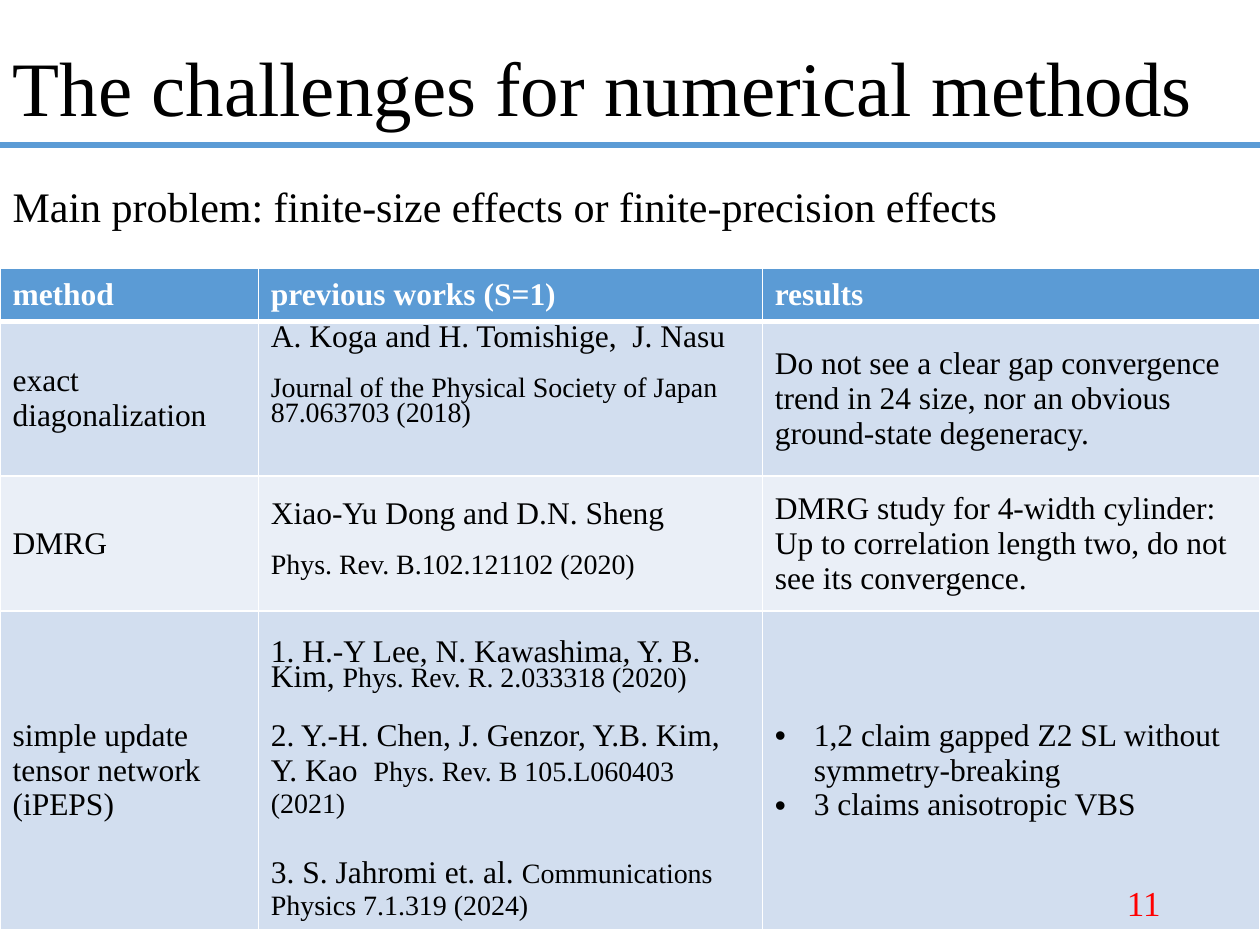
"""Build the slide on the challenges for numerical methods."""
from dataclasses import dataclass

from lxml.etree import SubElement
from pptx import Presentation
from pptx.dml.color import RGBColor
from pptx.enum.shapes import MSO_CONNECTOR
from pptx.enum.text import MSO_ANCHOR, MSO_AUTO_SIZE, PP_ALIGN
from pptx.oxml import parse_xml
from pptx.oxml.ns import nsdecls, qn
from pptx.util import Inches, Pt


@dataclass(frozen=True)
class Theme:
    font: str = "Times New Roman"
    blue: str = "5B9BD5"
    band_dark: str = "D2DEEF"
    band_light: str = "EAEFF7"
    white: str = "FFFFFF"
    black: str = "000000"
    red: str = "FF0000"
    title: int = 44
    lead: int = 24
    page: int = 20
    cell: int = 18
    cite: int = 16
    tight: float = 14.2
    gap: float = 20.7


T = Theme()


@dataclass(frozen=True)
class Para:
    text: str
    cite: str = ""
    size: int = T.cell
    line: float = 0
    before: float = 0
    bullet: bool = False


@dataclass(frozen=True)
class Cell:
    paras: tuple[Para, ...]
    top: float = 0.05
    bottom: float = 0.05


def plain(*lines: str) -> Cell:
    """Make a cell of ordinary paragraphs."""
    return Cell(tuple(Para(line) for line in lines))


def work(authors: str, journal: str, bottom: float = 0.05) -> Cell:
    """Make a cell with authors above a journal reference."""
    return Cell((Para(authors, line=T.tight),
                 Para(journal, size=T.cite, line=T.tight, before=T.tight)), bottom=bottom)


COLS = (2.05, 4, 3.95)
ROWS = (0.42, 1.23, 1.07, 2.53)
FILLS = (T.blue, T.band_dark, T.band_light, T.band_dark)
CELLS = (
    (plain("method"), plain("previous works (S=1)"), plain("results")),
    (plain("exact", "diagonalization"),
     work("A. Koga and H. Tomishige,  J. Nasu",
          "Journal of the Physical Society of Japan 87.063703 (2018)", bottom=0.36),
     plain("Do not see a clear gap convergence trend in 24 size, "
           "nor an obvious ground-state degeneracy.")),
    (plain("DMRG"),
     work("Xiao-Yu Dong and D.N. Sheng", "Phys. Rev. B.102.121102 (2020)"),
     plain("DMRG study for 4-width cylinder: Up to correlation length two, "
           "do not see its convergence.")),
    (plain("simple update tensor network", "(iPEPS)"),
     Cell((Para("1. H.-Y Lee, N. Kawashima, Y. B. Kim, ",
                "Phys. Rev. R. 2.033318 (2020)", line=T.tight),
           Para("2. Y.-H. Chen, J. Genzor, Y.B. Kim, Y. Kao  ",
                "Phys. Rev. B 105.L060403 (2021)", before=T.tight),
           Para("3. S. Jahromi et. al. ",
                "Communications Physics 7.1.319 (2024)", before=T.gap)), top=0.25),
     Cell((Para("1,2 claim gapped Z2 SL without symmetry-breaking", bullet=True),
           Para("3 claims anisotropic VBS", bullet=True)))),
)


def style(r, size: int, color: str, bold: bool = False) -> None:
    """Format one run."""
    r.font.name = T.font
    r.font.size = Pt(size)
    r.font.bold = bold
    r.font.color.rgb = RGBColor.from_string(color)


def place(sp, x: float, y: float, w: float, h: float) -> None:
    """Move and size a shape."""
    sp.left, sp.top, sp.width, sp.height = (Inches(v) for v in (x, y, w, h))


def write_line(sp, text: str, size: int, color: str, align=PP_ALIGN.LEFT):
    """Write a one-paragraph text and return its paragraph."""
    tf = sp.text_frame
    tf.text = text
    tf.word_wrap = True
    tf.auto_size = MSO_AUTO_SIZE.NONE
    p = tf.paragraphs[0]
    p.alignment = align
    p.space_before = Pt(0)
    style(p.runs[0], size, color)
    return p


def set_bullet(p, char: str = "") -> None:
    """Give a paragraph a hanging bullet, or none."""
    pPr = p._p.get_or_add_pPr()
    indent = Inches(0.31) if char else 0
    pPr.set("marL", str(indent))
    pPr.set("indent", str(-indent))
    if char:
        SubElement(pPr, qn("a:buFont")).set("typeface", "Arial")
        SubElement(pPr, qn("a:buChar")).set("char", char)
    else:
        SubElement(pPr, qn("a:buNone"))


def set_borders(cell, top: int, bottom: int) -> None:
    """Draw white borders around a cell, widths in points."""
    widths = {"L": 1, "R": 1, "T": top, "B": bottom}
    for i, (side, width) in enumerate(widths.items()):
        cell._tc.get_or_add_tcPr().insert(i, parse_xml(
            f'<a:ln{side} {nsdecls("a")} w="{Pt(width)}"><a:solidFill>'
            f'<a:srgbClr val="{T.white}"/></a:solidFill></a:ln{side}>'))


def fill_cell(cell, data: Cell, fill: str, header: bool) -> None:
    """Fill a table cell with colour and paragraphs."""
    cell.fill.solid()
    cell.fill.fore_color.rgb = RGBColor.from_string(fill)
    cell.vertical_anchor = MSO_ANCHOR.MIDDLE
    cell.margin_top, cell.margin_bottom = Inches(data.top), Inches(data.bottom)
    color = T.white if header else T.black
    tf = cell.text_frame
    for i, para in enumerate(data.paras):
        p = tf.add_paragraph() if i else tf.paragraphs[0]
        p.text = para.text
        if para.line:
            p.line_spacing = Pt(para.line)
        if para.before:
            p.space_before = Pt(para.before)
        if para.bullet:
            set_bullet(p, "•")
        style(p.runs[0], para.size, color, header)
        if para.cite:
            r = p.add_run()
            r.text = para.cite
            style(r, T.cite, color)


def add_methods_table(s) -> None:
    """Add the table of methods, works and results."""
    tbl = s.shapes.add_table(len(ROWS), len(COLS), Inches(0), Inches(2.13),
                             Inches(sum(COLS)), Inches(sum(ROWS))).table
    tbl.horz_banding = False
    for col, width in zip(tbl.columns, COLS):
        col.width = Inches(width)
    for i, (height, fill, row) in enumerate(zip(ROWS, FILLS, CELLS)):
        tbl.rows[i].height = Inches(height)
        for j, data in enumerate(row):
            cell = tbl.cell(i, j)
            fill_cell(cell, data, fill, header=i == 0)
            set_borders(cell, 3 if i == 1 else 1, 3 if i == 0 else 1)


def main() -> None:
    """Build and save the slide."""
    prs = Presentation()
    prs.slide_width, prs.slide_height = Inches(10), Inches(7.5)
    s = prs.slides.add_slide(prs.slide_layouts[1])

    rule = s.shapes.add_connector(MSO_CONNECTOR.STRAIGHT, Inches(0), Inches(1.15),
                                  Inches(10), Inches(1.15))
    rule.line.color.rgb = RGBColor.from_string(T.blue)
    rule.line.width = Pt(3)
    SubElement(rule._element.spPr, qn("a:effectLst"))

    title = s.shapes.title
    place(title, 0, 0, 10, 1.46)
    p = write_line(title, "The challenges for numerical methods", T.title, T.black)
    p.line_spacing = 0.9
    title.text_frame.vertical_anchor = MSO_ANCHOR.MIDDLE

    body = s.placeholders[1]
    place(body, 0, 1.38, 9.11, 0.5)
    p = write_line(body, "Main problem: finite-size effects or finite-precision effects",
                   T.lead, T.black)
    set_bullet(p)

    add_methods_table(s)

    page = s.shapes.add_textbox(Inches(7.06), Inches(6.95), Inches(2.25), Inches(0.4))
    write_line(page, "11", T.page, T.red, PP_ALIGN.RIGHT)
    prs.save("out.pptx")


if __name__ == "__main__":
    main()
